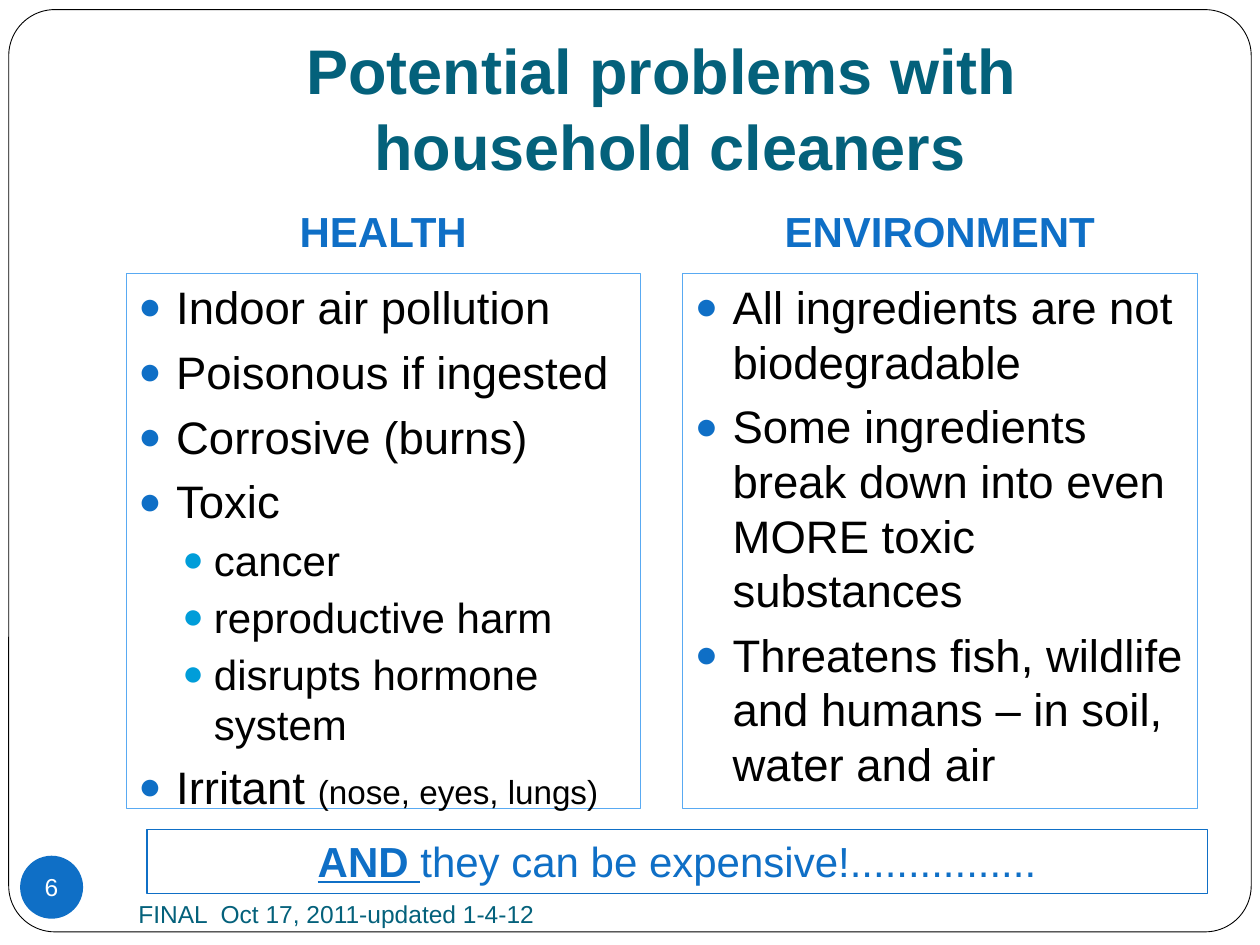
from dataclasses import dataclass

from lxml.etree import SubElement
from pptx import Presentation
from pptx.dml.color import RGBColor
from pptx.enum.shapes import MSO_SHAPE
from pptx.enum.text import MSO_ANCHOR, MSO_AUTO_SIZE, PP_ALIGN
from pptx.oxml.ns import qn
from pptx.util import Pt


@dataclass(frozen=True)
class Theme:
    font: str = "Arial"
    teal: str = "04617B"
    blue: str = "0F6FC6"
    cyan: str = "009DD9"
    border: str = "59AAF2"
    black: str = "000000"
    white: str = "FFFFFF"
    title_size: int = 36
    item_size: int = 26
    text_size: int = 24
    aside_size: int = 19
    small_size: int = 14


THEME = Theme()

# Bullet levels: left indent, hanging indent, space before, bullet colour, text size
LEVELS = (
    (21.6, 21.6, 5.8, THEME.blue, THEME.item_size),
    (43.2, 18, 3.7, THEME.cyan, THEME.text_size),
)

# Each item is its level, its text and an optional smaller aside
HEALTH_ITEMS = (
    (0, "Indoor air pollution", ""),
    (0, "Poisonous if ingested", ""),
    (0, "Corrosive (burns)", ""),
    (0, "Toxic", ""),
    (1, "cancer", ""),
    (1, "reproductive harm", ""),
    (1, "disrupts hormone system", ""),
    (0, "Irritant ", "(nose, eyes, lungs)"),
)
ENVIRONMENT_ITEMS = (
    (0, "All ingredients are not biodegradable", ""),
    (0, "Some ingredients break down into even MORE toxic substances", ""),
    (0, "Threatens fish, wildlife and humans – in soil, water and air", ""),
)

# Heading, heading height, left edge, border width, items
COLUMNS = (
    ("HEALTH", 36, 72, 0.5, HEALTH_ITEMS),
    ("ENVIRONMENT", 30, 390, 0.25, ENVIRONMENT_ITEMS),
)
COLUMN_WIDTH = 294
HEADING_BOTTOM = 150


def set_attributes(target, values):
    for name, value in values.items():
        setattr(target, name, value)


def add_run(paragraph, text, size, color, **font_values):
    run = paragraph.add_run()
    run.text = text
    set_attributes(run.font, {"name": THEME.font, "size": Pt(size), **font_values})
    run.font.color.rgb = RGBColor.from_string(color)


def add_panel(slide, preset, box, fill=None, line=None, line_width=0.5):
    """Add a preset shape with top-left text, and only the fill and line named."""
    shape = slide.shapes.add_shape(preset, *map(Pt, box))
    shape.shadow.inherit = False
    if fill:
        shape.fill.solid()
        shape.fill.fore_color.rgb = RGBColor.from_string(fill)
    else:
        shape.fill.background()
    if line:
        shape.line.color.rgb = RGBColor.from_string(line)
        shape.line.width = Pt(line_width)
    else:
        shape.line.fill.background()
    set_attributes(shape.text_frame, {"word_wrap": True, "vertical_anchor": MSO_ANCHOR.TOP})
    shape.text_frame.paragraphs[0].alignment = PP_ALIGN.LEFT
    return shape


def add_text(slide, box, text, size, color, anchor, alignment, **font_values):
    frame = slide.shapes.add_textbox(*map(Pt, box)).text_frame
    set_attributes(frame, {"word_wrap": True, "vertical_anchor": anchor})
    paragraph = frame.paragraphs[0]
    paragraph.alignment = alignment
    add_run(paragraph, text, size, color, **font_values)


def set_bullet(paragraph, indent, hanging, color):
    properties = paragraph._p.get_or_add_pPr()
    properties.set("marL", str(Pt(indent)))
    properties.set("indent", str(-Pt(hanging)))
    bullet_color = SubElement(properties, qn("a:buClr"))
    SubElement(bullet_color, qn("a:srgbClr"), val=color)
    SubElement(properties, qn("a:buSzPct"), val="85000")
    SubElement(properties, qn("a:buFont"), typeface=THEME.font)
    SubElement(properties, qn("a:buChar"), char="●")


def add_bullet_list(slide, box, line_width, items):
    frame = add_panel(slide, MSO_SHAPE.RECTANGLE, box, None, THEME.border, line_width).text_frame
    for index, (level, text, aside) in enumerate(items):
        indent, hanging, space_before, bullet_color, size = LEVELS[level]
        paragraph = frame.add_paragraph() if index else frame.paragraphs[0]
        set_attributes(paragraph, {
            "level": level,
            "alignment": PP_ALIGN.LEFT,
            "space_before": Pt(space_before),
        })
        set_bullet(paragraph, indent, hanging, bullet_color)
        add_run(paragraph, text, size, THEME.black)
        if aside:
            add_run(paragraph, aside, THEME.aside_size, THEME.black)


def format_title(slide, lines):
    title = slide.shapes.title
    set_attributes(title, {"left": Pt(72), "top": Pt(21.6), "width": Pt(612), "height": Pt(90)})
    set_attributes(title.text_frame, {
        "auto_size": MSO_AUTO_SIZE.NONE,
        "word_wrap": True,
        "vertical_anchor": MSO_ANCHOR.BOTTOM,
        "margin_bottom": Pt(7.2),
    })
    paragraph = title.text_frame.paragraphs[0]
    paragraph.alignment = PP_ALIGN.CENTER
    for index, line in enumerate(lines):
        if index:
            paragraph.add_line_break()
        add_run(paragraph, line, THEME.title_size, THEME.teal, bold=True)


def add_number_badge(slide, number):
    badge = add_panel(slide, MSO_SHAPE.OVAL, (11.5, 489, 36, 36), THEME.blue)
    margins = {f"margin_{side}": 0 for side in ("left", "top", "right", "bottom")}
    set_attributes(badge.text_frame, {
        "word_wrap": False, "vertical_anchor": MSO_ANCHOR.MIDDLE, **margins})
    paragraph = badge.text_frame.paragraphs[0]
    paragraph.alignment = PP_ALIGN.CENTER
    add_run(paragraph, number, THEME.small_size, THEME.white)


def add_cost_banner(slide):
    banner = add_panel(slide, MSO_SHAPE.RECTANGLE, (84, 474, 606, 36.7), None, THEME.blue, 0.75)
    paragraph = banner.text_frame.paragraphs[0]
    paragraph.alignment = PP_ALIGN.CENTER
    add_run(paragraph, "AND ", THEME.text_size, THEME.blue, bold=True, underline=True)
    add_run(paragraph, "they can be expensive!................", THEME.text_size, THEME.blue)


def main():
    presentation = Presentation()
    set_attributes(presentation, {"slide_width": Pt(720), "slide_height": Pt(540)})
    slide = presentation.slides.add_slide(presentation.slide_layouts[5])

    frame = add_panel(slide, MSO_SHAPE.ROUNDED_RECTANGLE, (5, 5.5, 710, 527),
                      THEME.white, THEME.black)
    frame.adjustments[0] = 0.05
    # The frame belongs behind the title placeholder
    slide.shapes.title._element.addprevious(frame._element)

    add_number_badge(slide, "6")
    format_title(slide, ("Potential problems with", " household cleaners"))
    for heading, height, left, line_width, items in COLUMNS:
        add_text(slide, (left, HEADING_BOTTOM - height, COLUMN_WIDTH, height), heading,
                 THEME.text_size, THEME.blue, MSO_ANCHOR.BOTTOM, PP_ALIGN.CENTER, bold=True)
        add_bullet_list(slide, (left, 156, COLUMN_WIDTH, 306), line_width, items)
    add_cost_banner(slide)
    add_text(slide, (72, 504, 312, 36), "FINAL  Oct 17, 2011-updated 1-4-12",
             THEME.small_size, THEME.teal, MSO_ANCHOR.MIDDLE, PP_ALIGN.LEFT)

    presentation.save("out.pptx")


if __name__ == "__main__":
    main()
